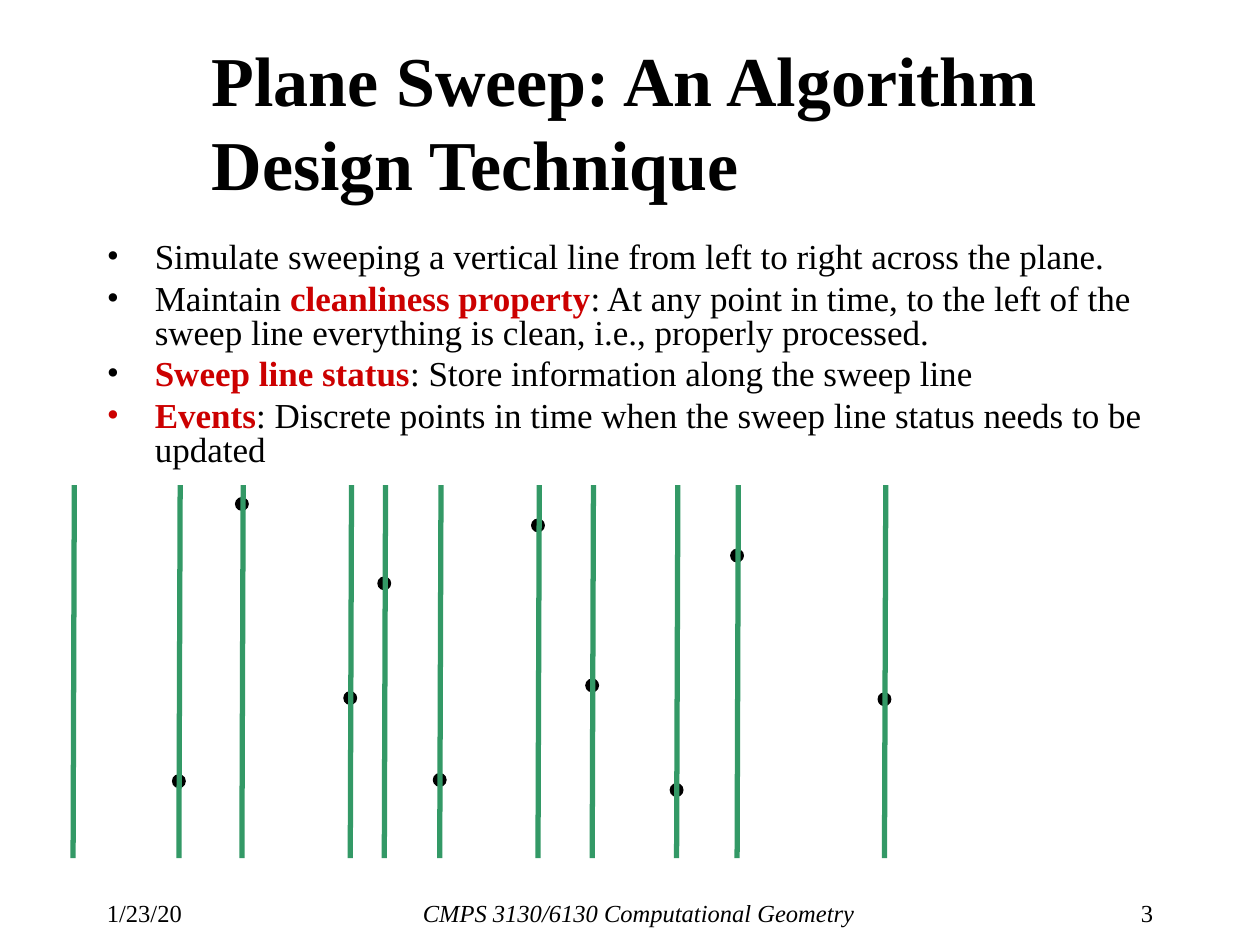
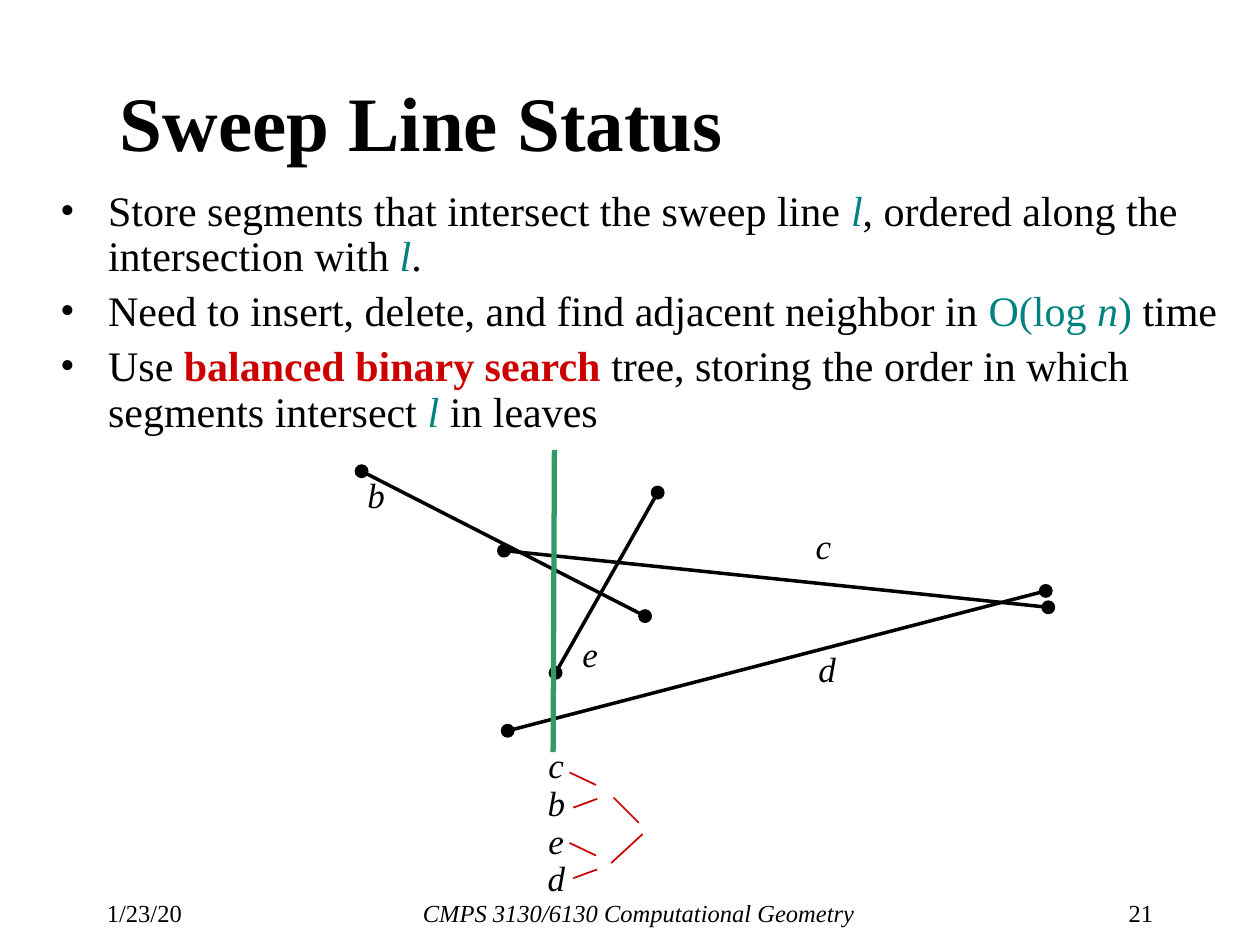
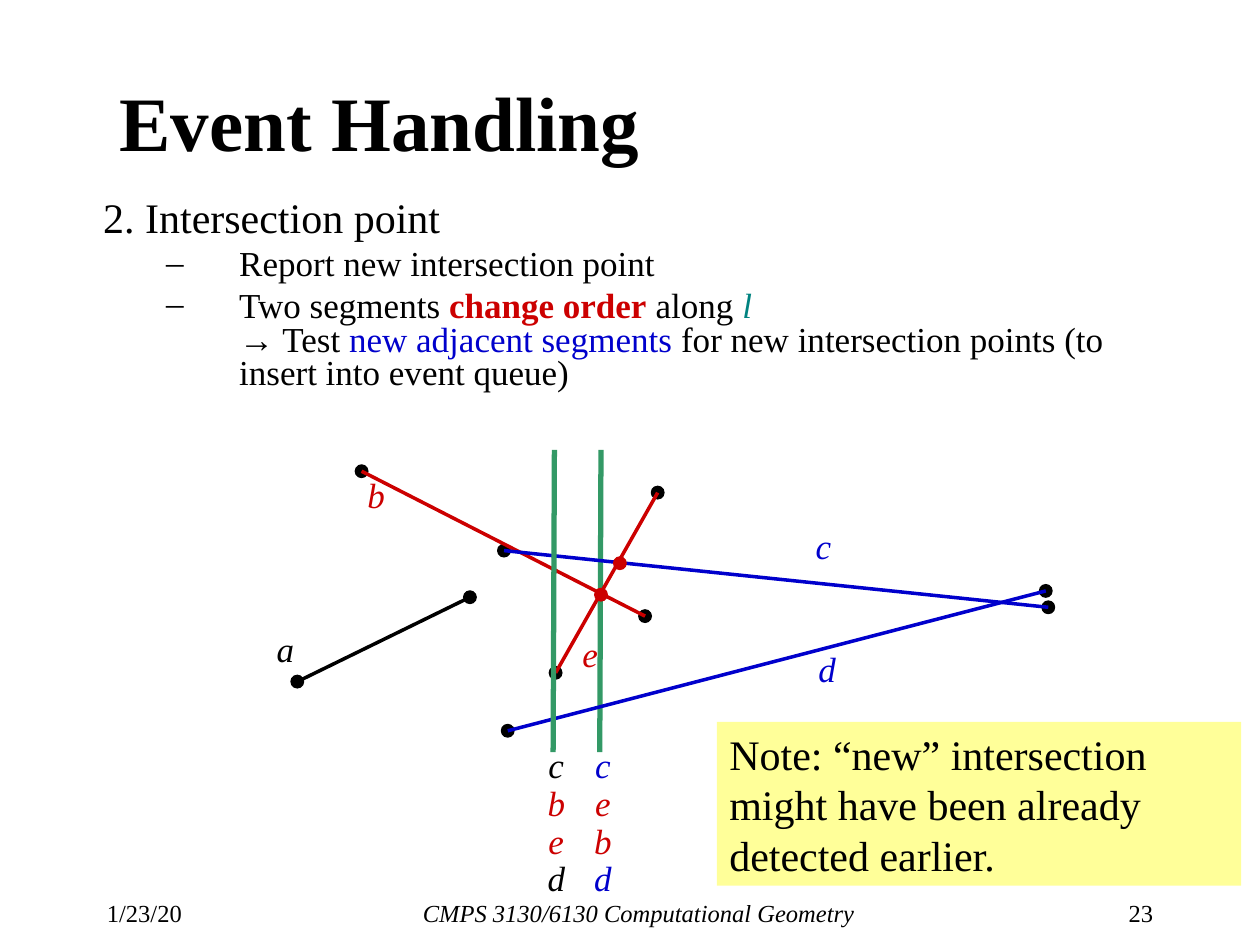
"""Build three slides on plane sweep algorithms."""
from collections import namedtuple

from lxml import etree
from pptx import Presentation
from pptx.dml.color import RGBColor
from pptx.enum.shapes import MSO_CONNECTOR, MSO_SHAPE
from pptx.enum.text import MSO_ANCHOR, MSO_AUTO_SIZE, PP_ALIGN
from pptx.oxml.ns import qn
from pptx.util import Inches, Pt

LEFT, CENTER, RIGHT = PP_ALIGN.LEFT, PP_ALIGN.CENTER, PP_ALIGN.RIGHT
MIDDLE, NO_FIT = MSO_ANCHOR.MIDDLE, MSO_AUTO_SIZE.NONE
STRAIGHT = MSO_CONNECTOR.STRAIGHT
OVAL, RECT = MSO_SHAPE.OVAL, MSO_SHAPE.RECTANGLE

COLORS = {"black": "000000", "red": "CC0000", "blue": "0000CC",
          "teal": "008380", "green": "339966", "yellow": "FFFF99"}
FONT = "Times New Roman"
TITLE_ONLY = 5
CELL = Inches(10) // 100
DOT, LABEL = 1, 4.3

Box = namedtuple("Box", "left top width height")
Style = namedtuple("Style", "color bold italic")
Para = namedtuple("Para", "runs size indent hang bullet bullet_color level")
Segment = namedtuple("Segment", "start end label")

STYLES = {
    "plain": Style("black", False, False),
    "title": Style("black", True, False),
    "term": Style("red", True, False),
    "math": Style("teal", False, True),
    "teal": Style("teal", False, False),
    "new": Style("blue", False, False),
    "black": Style("black", False, True),
    "red": Style("red", False, True),
    "blue": Style("blue", False, True),
}

DIAGRAM = Box(20, 35, 65, 37)
SEGMENTS = {
    "a": Segment((3.6, 19.1), (17.3, 12.4), (0.5, 14.3)),
    "b": Segment((8.7, 2.4), (31.2, 13.9), (7.7, 2.1)),
    "c": Segment((20, 8.7), (63.2, 13.2), (43.2, 6.1)),
    "d": Segment((20.3, 23), (63, 11.9), (43.5, 15.9)),
    "e": Segment((24.1, 18.4), (32.2, 4.1), (24.7, 14.7)),
}
SWEEP_X, NEXT_SWEEP_X = 24, 27.7
CROSSINGS = [(27.7, 12.2), (29.2, 9.7)]
LEAF_LINKS = [((25.2, 26.3), (27.3, 27.3)), ((25.5, 29.1), (27.4, 28.4))]
ROOT_LINKS = [((28.7, 28.3), (30.7, 30.3)), ((28.5, 33.5), (31, 31.2))]
LEAF_PAIR_STEP = 5.6

EVENT_BOX = Box(5.8, 38.5, 65, 29.6)
EVENTS = [(8.4, 23.5), (13.4, 1.5), (22, 16.9), (24.7, 7.8), (29.1, 23.4),
          (36.9, 3.2), (41.2, 15.9), (47.9, 24.2), (52.7, 5.6), (64.4, 17)]


def rgb(name):
    """Return the named colour."""
    return RGBColor.from_string(COLORS[name])


def emu(*cells):
    """Turn grid cells into slide lengths."""
    return [round(c * CELL) for c in cells]


def add_runs(p, runs, size):
    """Write styled runs, with line breaks at newlines."""
    for text, name in runs:
        style = STYLES[name]
        for i, line in enumerate(text.split("\n")):
            if i:
                p.add_line_break()
            if line:
                r = p.add_run()
                r.text = line
                r.font.name, r.font.size = FONT, Pt(size)
                r.font.bold, r.font.italic = style.bold, style.italic
                r.font.color.rgb = rgb(style.color)


def add_text(slide, box, runs, size, align=LEFT, spacing=None):
    """Add a wrapped text box with one paragraph."""
    tf = slide.shapes.add_textbox(*emu(*box)).text_frame
    tf.word_wrap = True
    p = tf.paragraphs[0]
    p.alignment, p.line_spacing = align, spacing
    add_runs(p, runs, size)


def bullet(runs, size, color="black"):
    """Describe a first-level bullet."""
    return Para(runs, size, 0.38, 0.38, "•", color, 0)


def dash(runs, size):
    """Describe a second-level bullet."""
    return Para(runs, size, 1.08, 0.58, "–", "black", 1)


def set_bullet(p, para):
    """Set the indents and the bullet of a paragraph."""
    pPr = p._p.get_or_add_pPr()
    pPr.set("marL", str(Inches(para.indent)))
    pPr.set("indent", str(-Inches(para.hang)))
    if para.bullet:
        clr = etree.SubElement(pPr, qn("a:buClr"))
        etree.SubElement(clr, qn("a:srgbClr"), val=COLORS[para.bullet_color])
        etree.SubElement(pPr, qn("a:buFont"), typeface=FONT)
        etree.SubElement(pPr, qn("a:buChar"), char=para.bullet)


def add_body(slide, box, paras, spacing):
    """Add the body text with its bullets."""
    tf = slide.shapes.add_textbox(*emu(*box)).text_frame
    tf.word_wrap = True
    for i, para in enumerate(paras):
        p = tf.add_paragraph() if i else tf.paragraphs[0]
        p.level, p.line_spacing = para.level, spacing
        p.space_before = Pt(0.23 * para.size)
        set_bullet(p, para)
        add_runs(p, para.runs, para.size)


def add_line(slide, box, start, end, color, width):
    """Draw a straight line between two points of the box."""
    ends = emu(box.left + start[0], box.top + start[1],
               box.left + end[0], box.top + end[1])
    sp = slide.shapes.add_connector(STRAIGHT, *ends)
    sp.line.color.rgb, sp.line.width = rgb(color), Pt(width)
    etree.SubElement(sp._element.spPr, qn("a:effectLst"))


def add_dot(slide, box, center, color="black"):
    """Draw a point centred in the box's grid."""
    x, y = box.left + center[0] - DOT / 2, box.top + center[1] - DOT / 2
    sp = slide.shapes.add_shape(OVAL, *emu(x, y, DOT, DOT))
    sp.shadow.inherit = False
    sp.fill.solid()
    sp.fill.fore_color.rgb = rgb(color)
    sp.line.color.rgb, sp.line.width = rgb(color), Pt(0.75)


def add_sweep_line(slide, box, x, top, bottom):
    """Draw a slightly slanted sweep line."""
    add_line(slide, box, (x, top), (x - 0.1, bottom), "green", 3)


def add_status(slide, box, x, order):
    """List the segments in order below a sweep line."""
    area = Box(box.left + x - 2, box.top + 23.9, LABEL, 13)
    add_text(slide, area, order, 20, CENTER, 0.9)


def add_segments(slide, box, colors):
    """Draw the end points, segments and labels."""
    for name in colors:
        add_dot(slide, box, SEGMENTS[name].start)
        add_dot(slide, box, SEGMENTS[name].end)
    for name, color in colors.items():
        seg = SEGMENTS[name]
        add_line(slide, box, seg.start, seg.end, color, 2)
        area = Box(box.left + seg.label[0], box.top + seg.label[1], LABEL, LABEL)
        add_text(slide, area, [(name, color)], 20, CENTER)


def add_tree(slide, box):
    """Draw the links of the search tree beside the status."""
    for shift in (0, LEAF_PAIR_STEP):
        for (x1, y1), (x2, y2) in LEAF_LINKS:
            add_line(slide, box, (x1, y1 + shift), (x2, y2 + shift), "red", 1)
    for start, end in ROOT_LINKS:
        add_line(slide, box, start, end, "red", 1)


def add_events(slide, box):
    """Draw the event points with a sweep line through each."""
    for event in EVENTS:
        add_dot(slide, box, event)
    for x in [0] + [x for x, _ in EVENTS]:
        add_sweep_line(slide, box, x + 0.1, 0, box.height)


def add_note(slide, box, text):
    """Add a yellow note."""
    sp = slide.shapes.add_shape(RECT, *emu(*box))
    sp.shadow.inherit = False
    sp.fill.solid()
    sp.fill.fore_color.rgb = rgb("yellow")
    sp.line.fill.background()
    tf = sp.text_frame
    tf.word_wrap = True
    tf.vertical_anchor = MIDDLE
    tf.paragraphs[0].alignment = LEFT
    add_runs(tf.paragraphs[0], [(text, "plain")], 24)


def add_slide(prs, title, number, left=8.5, size=44):
    """Add a slide with its title and footer."""
    slide = prs.slides.add_slide(prs.slide_layouts[TITLE_ONLY])
    sp = slide.shapes.title
    sp.left, sp.top, sp.width, sp.height = emu(left, 3.3, 82.5, 12.5)
    tf = sp.text_frame
    tf.word_wrap, tf.auto_size, tf.vertical_anchor = True, NO_FIT, MIDDLE
    tf.paragraphs[0].alignment = LEFT
    add_runs(tf.paragraphs[0], [(title, "title")], size)
    add_text(slide, Box(7.5, 70.8, 9.5, 2.5), [("1/23/20", "plain")], 14)
    add_text(slide, Box(19, 70.8, 63.4, 2.5),
             [("CMPS 3130/6130 Computational Geometry", "black")], 14, CENTER)
    add_text(slide, Box(84.3, 70.8, 8.2, 2.5), [(number, "plain")], 14, RIGHT)
    return slide


def technique_slide(prs):
    """Introduce plane sweep."""
    slide = add_slide(prs, "Plane Sweep: An Algorithm Design Technique", "3", 15.8, 40)
    add_body(slide, Box(7.5, 18.8, 87.2, 26.2), [
        bullet([("Simulate sweeping a vertical line from left to right "
                 "across the plane.", "plain")], 20),
        bullet([("Maintain ", "plain"), ("cleanliness property", "term"),
                (": At any point in time, to the left of the sweep line "
                 "everything is clean, i.e., properly processed.", "plain")], 20),
        bullet([("Sweep line status", "term"),
                (": Store information along the sweep line", "plain")], 20),
        bullet([("Events", "term"),
                (": Discrete points in time when the sweep line status "
                 "needs to be updated", "plain")], 20, "red"),
    ], 0.8)
    add_events(slide, EVENT_BOX)


def status_slide(prs):
    """Show the sweep line status and its search tree."""
    slide = add_slide(prs, "Sweep Line Status", "21")
    add_body(slide, Box(3.8, 14.6, 94.3, 27.3), [
        bullet([("Store segments that intersect the sweep line ", "plain"),
                ("l", "math"), (", ordered along the intersection with ", "plain"),
                ("l", "math"), (".", "plain")], 24),
        bullet([("Need to insert, delete, and find adjacent neighbor in ", "plain"),
                ("O(log ", "teal"), ("n", "math"), (")", "teal"),
                (" time", "plain")], 24),
        bullet([("Use ", "plain"), ("balanced binary search", "term"),
                (" tree, storing the order in which segments intersect ", "plain"),
                ("l ", "math"), ("in leaves", "plain")], 24),
    ], 0.9)
    add_segments(slide, DIAGRAM, dict.fromkeys("bced", "black"))
    add_sweep_line(slide, DIAGRAM, SWEEP_X, 0.7, 24.7)
    add_status(slide, DIAGRAM, SWEEP_X, [("c\nb\ne\nd", "black")])
    add_tree(slide, DIAGRAM)


def event_slide(prs):
    """Show how an intersection event is handled."""
    slide = add_slide(prs, "Event Handling", "23")
    add_body(slide, Box(7.2, 15.5, 87.2, 18.6), [
        Para([("2. Intersection point", "plain")], 24, 0.67, 0.67, None, None, 0),
        dash([("Report new intersection point", "plain")], 20),
        dash([("Two segments ", "plain"), ("change order", "term"),
              (" along ", "plain"), ("l\n", "math"), ("→ Test ", "plain"),
              ("new adjacent segments", "new"),
              (" for new intersection points (to insert into event queue)",
               "plain")], 20),
    ], 0.8)
    add_sweep_line(slide, DIAGRAM, NEXT_SWEEP_X, 0.7, 24.7)
    add_segments(slide, DIAGRAM, {"a": "black", "b": "red", "e": "red",
                                  "c": "blue", "d": "blue"})
    add_status(slide, DIAGRAM, NEXT_SWEEP_X,
               [("c\n", "blue"), ("e\nb\n", "red"), ("d", "blue")])
    add_sweep_line(slide, DIAGRAM, SWEEP_X, 0.7, 24.7)
    add_status(slide, DIAGRAM, SWEEP_X,
               [("c\n", "black"), ("b\ne\n", "red"), ("d", "black")])
    for crossing in CROSSINGS:
        add_dot(slide, DIAGRAM, crossing, "red")
    add_note(slide, Box(56.9, 57.3, 41.6, 13),
             "Note: “new” intersection might have been already detected earlier.")


def main():
    """Build and save the presentation."""
    prs = Presentation()
    prs.slide_width, prs.slide_height = emu(100, 75)
    technique_slide(prs)
    status_slide(prs)
    event_slide(prs)
    prs.save("out.pptx")


if __name__ == "__main__":
    main()
